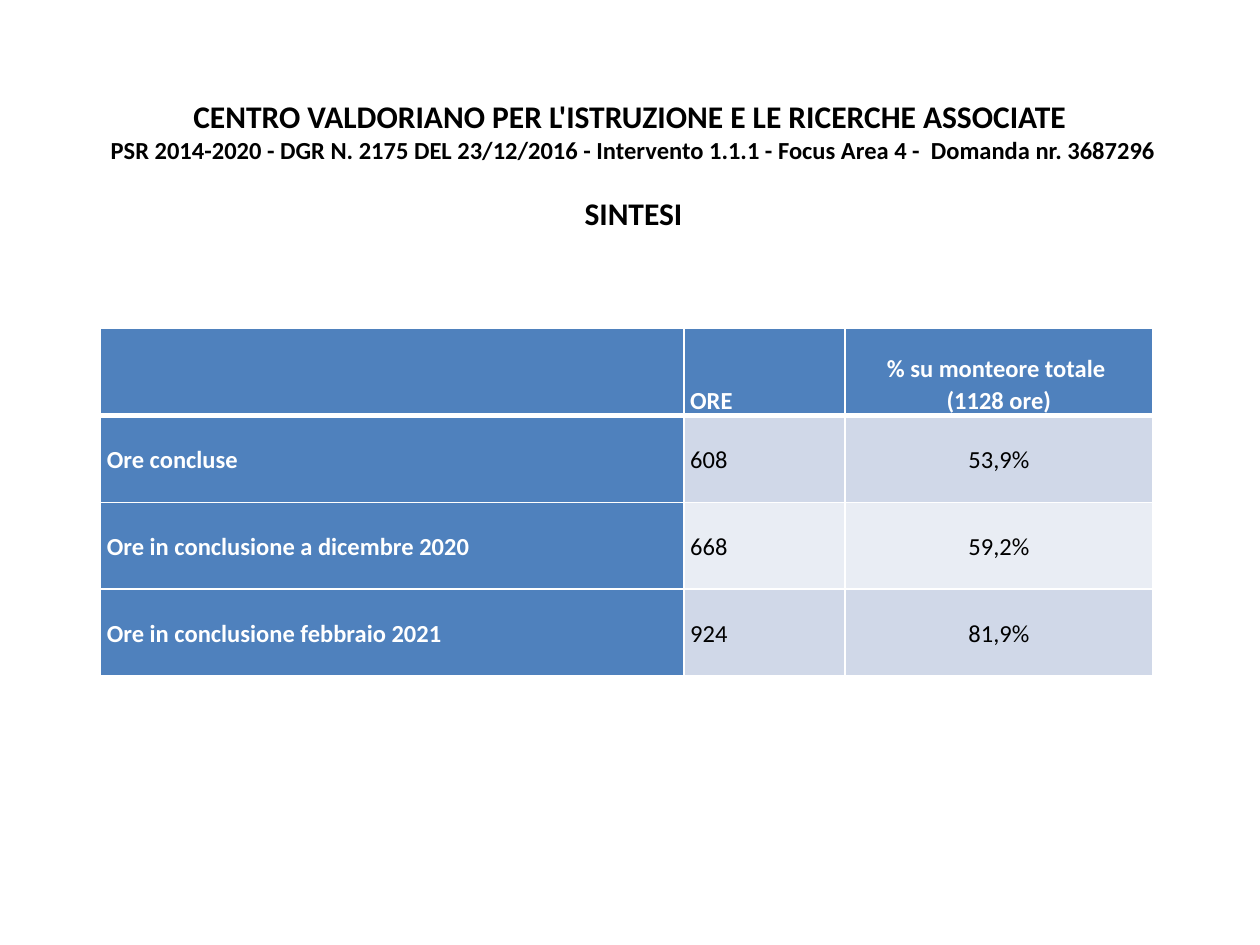
from lxml.etree import SubElement
from pptx import Presentation
from pptx.dml.color import RGBColor
from pptx.enum.text import MSO_ANCHOR, PP_ALIGN
from pptx.oxml.ns import qn
from pptx.util import Pt

FONT = "Calibri"
BLACK, WHITE, BLUE = "000000", "FFFFFF", "4F81BD"
BANDS = ["D0D8E8", "E9EDF4"]
COLUMNS = [333.4, 92.2, 175.7]
ROWS = [
    ["", "ORE", "% su monteore totale \n(1128 ore)"],
    ["Ore concluse", "608", "53,9%"],
    ["Ore in conclusione a dicembre 2020", "668", "59,2%"],
    ["Ore in conclusione febbraio 2021", "924", "81,9%"],
]


def rgb(value):
    return RGBColor.from_string(value)


def style_run(r, size, color, bold):
    r.font.name = FONT
    r.font.size = Pt(size)
    r.font.bold = bold
    r.font.color.rgb = rgb(color)


def set_borders(cell, widths, color):
    """Draw the cell's left, right, top and bottom lines, in that order."""
    tc_pr = cell._tc.get_or_add_tcPr()
    for side, width in zip("LRTB", widths):
        ln = SubElement(tc_pr, qn(f"a:ln{side}"), w=str(Pt(width)))
        SubElement(SubElement(ln, qn("a:solidFill")), qn("a:srgbClr"), val=color)


def add_heading(s, left, top, width, height):
    tf = s.shapes.add_textbox(Pt(left), Pt(top), Pt(width), Pt(height)).text_frame
    tf.word_wrap = True
    tf.vertical_anchor = MSO_ANCHOR.MIDDLE

    # Institute and project reference share a paragraph, split by a line break
    p = tf.paragraphs[0]
    p.text = ("CENTRO VALDORIANO PER L'ISTRUZIONE E LE RICERCHE ASSOCIATE \v"
              "PSR 2014-2020 - DGR N. 2175 DEL 23/12/2016 - Intervento 1.1.1"
              " - Focus Area 4 -  Domanda nr. 3687296")
    for r, size in zip(p.runs, [18, 14]):
        style_run(r, size, BLACK, True)

    # Section name
    section = tf.add_paragraph()
    section.text = "SINTESI"
    section.space_before = Pt(17)
    style_run(section.runs[0], 18, BLACK, True)

    for p in tf.paragraphs:
        p.alignment = PP_ALIGN.CENTER


def fill_cell(cell, text, row, col):
    header = row == 0
    strong = header or col == 0
    cell.text_frame.text = text
    cell.vertical_anchor = MSO_ANCHOR.BOTTOM if header else MSO_ANCHOR.MIDDLE
    cell.margin_left = cell.margin_right = Pt(3.6)
    cell.margin_top = cell.margin_bottom = 0
    for p in cell.text_frame.paragraphs:
        p.line_spacing = 1.07
        p.alignment = PP_ALIGN.CENTER if col == 2 else PP_ALIGN.LEFT
        for r in p.runs:
            style_run(r, 14, WHITE if strong else BLACK, strong)

    # Lines come before the fill in the cell properties
    set_borders(cell, [1, 1, 3 if row == 1 else 1, 3 if header else 1], WHITE)
    cell.fill.solid()
    cell.fill.fore_color.rgb = rgb(BLUE if strong else BANDS[(row - 1) % 2])


def add_hours_table(s, left, top, width, height):
    table = s.shapes.add_table(len(ROWS), len(COLUMNS), Pt(left), Pt(top),
                               Pt(width), Pt(height)).table
    for column, share in zip(table.columns, COLUMNS):
        column.width = Pt(width * share / sum(COLUMNS))
    for i, values in enumerate(ROWS):
        table.rows[i].height = Pt(height / len(ROWS))
        for j, text in enumerate(values):
            fill_cell(table.cell(i, j), text, i, j)


def main():
    prs = Presentation()
    prs.slide_width, prs.slide_height = Pt(720), Pt(540)
    s = prs.slides.add_slide(prs.slide_layouts[6])
    add_heading(s, 38, 65.7, 648, 57)
    add_hours_table(s, 57.4, 187.8, 601.3, 198.6)
    prs.save("out.pptx")


if __name__ == "__main__":
    main()
